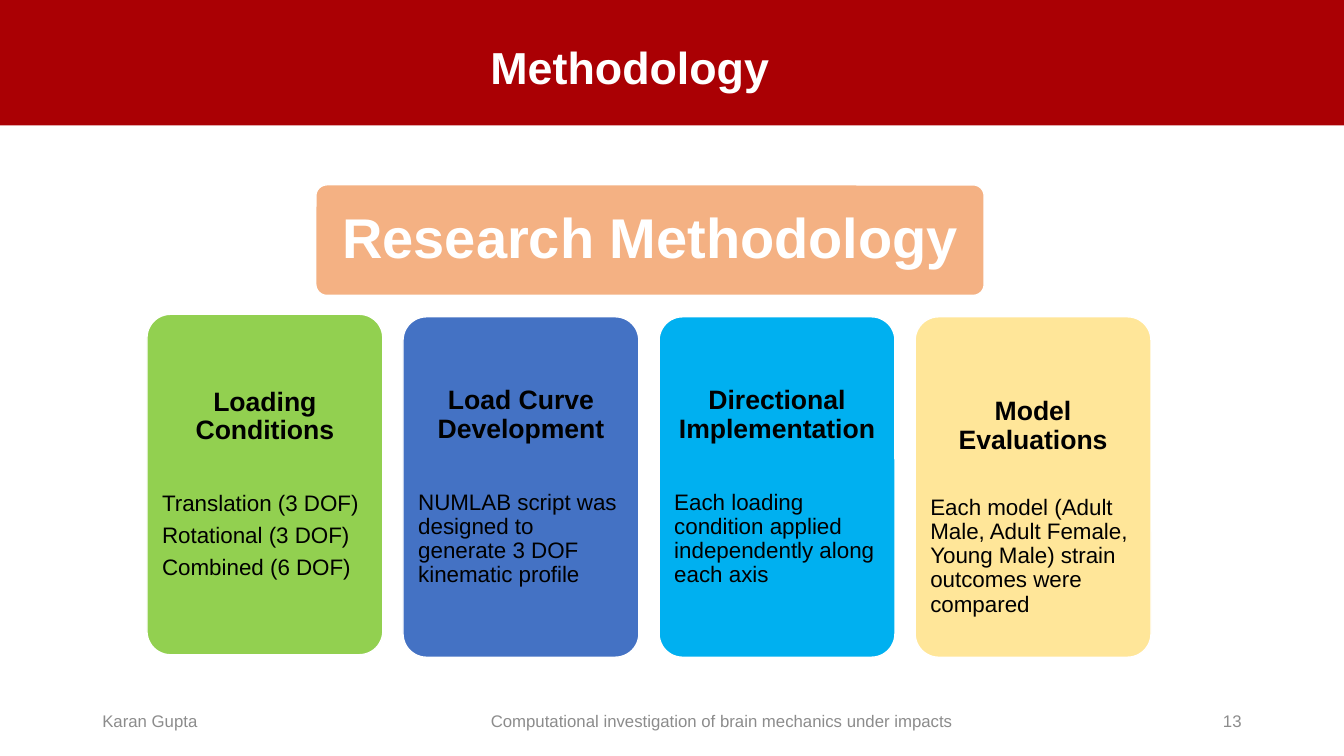
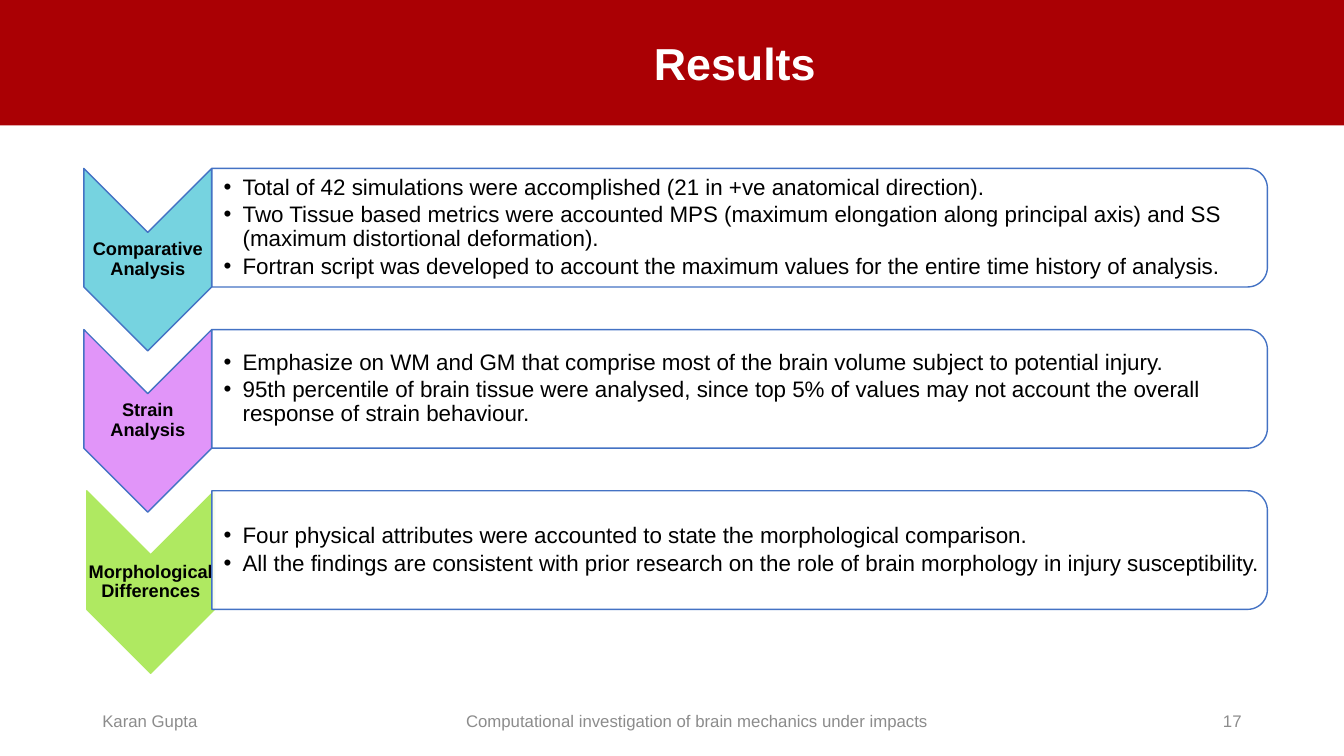
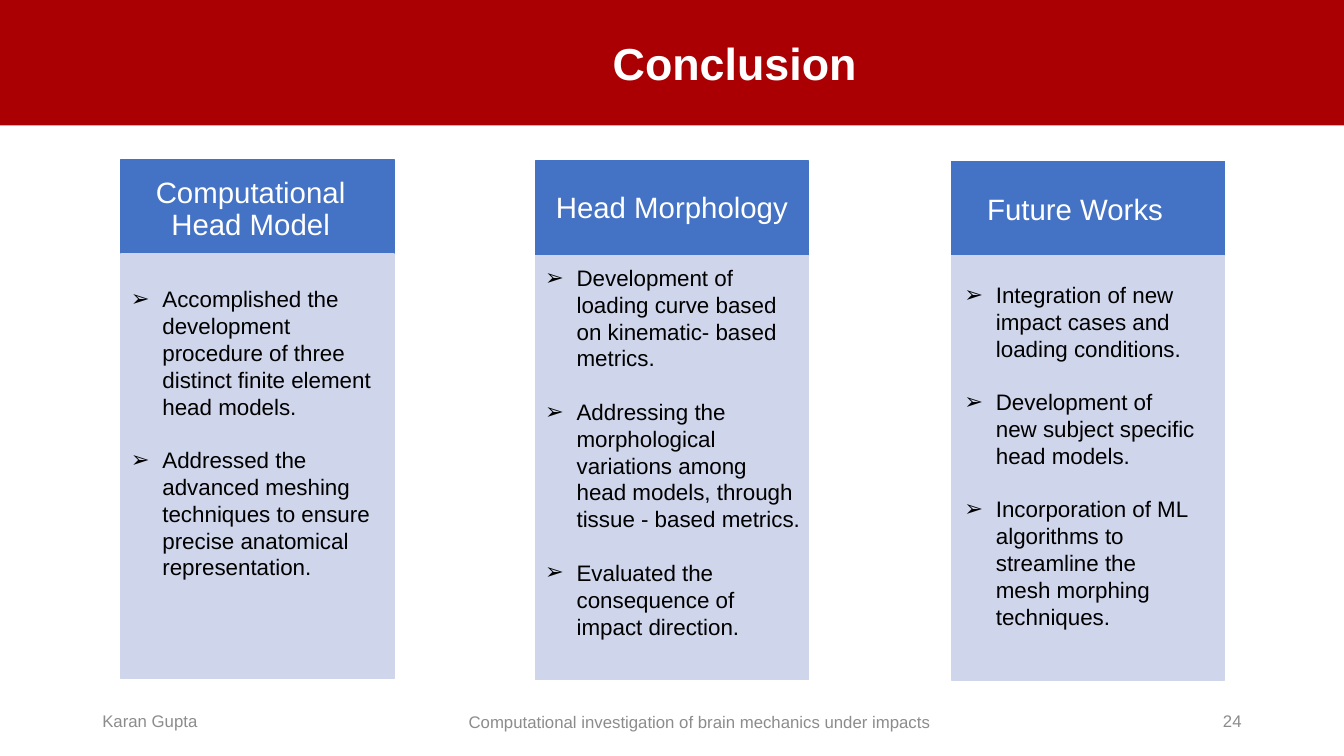
from math import cos, pi, sin

from lxml.etree import SubElement
from pptx import Presentation
from pptx.dml.color import RGBColor
from pptx.enum.shapes import MSO_SHAPE
from pptx.enum.text import MSO_ANCHOR, PP_ALIGN
from pptx.oxml.ns import qn
from pptx.util import Pt

COLORS = {
    "band": "AA0004", "white": "FFFFFF", "black": "000000", "gray": "8C8C8C",
    "peach": "F4B183", "green": "92D050", "blue": "4472C4", "sky": "00B0F0",
    "sand": "FFE699", "teal": "76D3E0", "violet": "E195F9", "lime": "AFE961",
    "pale": "CFD5EA",
}
CENTER = {"alignment": PP_ALIGN.CENTER}
TIGHT = {"line_spacing": 0.9}
STYLES = {
    "title": {"size": Pt(32), "bold": True, "color": "white", **CENTER, **TIGHT},
    "footer": {"size": Pt(12), "color": "gray"},
    "banner": {"size": Pt(40), "bold": True, "color": "white", **CENTER, **TIGHT, "space_after": Pt(14)},
    "heading": {"size": Pt(19), "bold": True, "color": "black", **CENTER, **TIGHT},
    "detail": {"size": Pt(16), "color": "black", **TIGHT, "space_after": Pt(5.6)},
    "step": {"size": Pt(13), "bold": True, "color": "black", **CENTER, **TIGHT, "space_after": Pt(4.5)},
    "finding": {"size": Pt(16), "color": "black", "bullet": ("•", 13.5), **TIGHT, "space_after": Pt(2.4)},
    "topic": {"size": Pt(21), "color": "white", **CENTER, **TIGHT, "space_after": Pt(7.4)},
    "point": {"size": Pt(16), "color": "black", "bullet": ("➢", 22.5), "space_after": Pt(19)},
}


def paint(sp, fill, line, alpha=None):
    sp.shadow.inherit = False
    sp.fill.solid()
    sp.fill.fore_color.rgb = RGBColor.from_string(COLORS[fill])
    sp.line.color.rgb = RGBColor.from_string(COLORS[line])
    sp.line.width = Pt(1)
    if alpha:
        for clr in sp.element.spPr.iter(qn("a:srgbClr")):
            if clr.get("val") == COLORS[fill]:
                SubElement(clr, qn("a:alpha"), val=str(alpha * 1000))


def write(sp, paras, inset=(7.2, 3.6, 7.2, 3.6), anchor=MSO_ANCHOR.MIDDLE):
    tf = sp.text_frame
    tf.word_wrap = True
    tf.vertical_anchor = anchor
    for side, gap in zip(("left", "top", "right", "bottom"), inset):
        setattr(tf, f"margin_{side}", Pt(gap))
    for i, (text, style) in enumerate(paras):
        p = tf.add_paragraph() if i else tf.paragraphs[0]
        p.alignment = PP_ALIGN.LEFT
        if "bullet" in style:
            char, indent = style["bullet"]
            pPr = p._p.get_or_add_pPr()
            pPr.set("marL", str(Pt(indent)))
            pPr.set("indent", str(-Pt(indent)))
            SubElement(pPr, qn("a:buFont"), typeface="Arial")
            SubElement(pPr, qn("a:buChar"), char=char)
        r = p.add_run()
        r.text = text
        r.font.name = "Arial"
        r.font.color.rgb = RGBColor.from_string(COLORS[style["color"]])
        for key, value in style.items():
            if key not in ("color", "bullet"):
                setattr(r.font if key in ("size", "bold") else p, key, value)


prs = Presentation()
prs.slide_width, prs.slide_height = Pt(960), Pt(540)

slides = []
for title, left, top, number, footer_width, footer_top in (
    ("Methodology", 136.8, 23.8, "13", 395.3, 500.4),
    ("Results", 211.7, 20.9, "17", 360, 500.4),
    ("Conclusion", 211.7, 20.9, "24", 363.6, 501.1),
):
    s = prs.slides.add_slide(prs.slide_layouts[6])
    slides.append(s)
    band = s.shapes.add_shape(MSO_SHAPE.RECTANGLE, 0, 0, prs.slide_width, Pt(89.6))
    paint(band, "band", "band")
    band.line.fill.background()
    tb = s.shapes.add_textbox(Pt(left), Pt(top), Pt(626.4), Pt(51.8))
    write(tb, [(title, STYLES["title"])])
    for text, x, y, w, align in (
        ("Karan Gupta", 66, 500.4, 216, PP_ALIGN.LEFT),
        ("Computational investigation of brain mechanics under impacts",
         318, footer_top, footer_width, PP_ALIGN.CENTER),
        (number, 678, 500.4, 216, PP_ALIGN.RIGHT),
    ):
        tb = s.shapes.add_textbox(Pt(x), Pt(y), Pt(w), Pt(28.8))
        write(tb, [(text, {**STYLES["footer"], "alignment": align})])

methodology, results, conclusion = slides

banner = methodology.shapes.add_shape(
    MSO_SHAPE.ROUNDED_RECTANGLE, Pt(225.6), Pt(132), Pt(477.4), Pt(79))
banner.adjustments[0] = 0.1
paint(banner, "peach", "white")
write(banner, [("Research Methodology", STYLES["banner"])], (12, 12, 12, 12))

cards = (
    ("green", 224.5, 5.9, 33.5, "Loading Conditions",
     ("Translation (3 DOF)", "Rotational (3 DOF)", "Combined (6 DOF)")),
    ("blue", 226.3, 5.9, 33.5, "Load Curve Development",
     ("NUMLAB script was designed to generate 3 DOF kinematic profile",)),
    ("sky", 226.3, 5.9, 33.5, "Directional Implementation",
     ("Each loading condition applied independently along each axis",)),
    ("sand", 226.3, 34.7, 29.4, "Model Evaluations",
     ("Each model (Adult Male, Adult Female, Young Male) strain outcomes were compared",)),
)
for i, (fill, top, inset_top, gap, heading, details) in enumerate(cards):
    card = methodology.shapes.add_shape(
        MSO_SHAPE.ROUNDED_RECTANGLE, Pt(105 + 182.9 * i), Pt(top), Pt(168.5), Pt(243.2))
    card.adjustments[0] = 0.1
    paint(card, fill, "white")
    paras = [(heading, {**STYLES["heading"], "space_after": Pt(gap)})]
    paras += [(text, STYLES["detail"]) for text in details]
    write(card, paras, (5.9, inset_top, 5.9, 5.9))

steps = (
    ("Comparative Analysis", "teal", "blue", 59.9,
     ("Total of 42 simulations were accomplished (21 in +ve anatomical direction).",
      "Two Tissue based metrics were accounted MPS (maximum elongation along principal axis) and SS (maximum distortional deformation).",
      "Fortran script was developed to account the maximum values for the entire time history of analysis.")),
    ("Strain Analysis", "violet", "blue", 59.9,
     ("Emphasize on WM and GM that comprise most of the brain volume subject to potential injury.",
      "95th percentile of brain tissue were analysed, since top 5% of values may not account the overall response of strain behaviour.")),
    ("Morphological Differences", "lime", "lime", 62,
     ("Four physical attributes were accounted to state the morphological comparison.",
      "All the findings are consistent with prior research on the role of brain morphology in injury susceptibility.")),
)
box_left, box_right, box_height, radius = 151.3, 905.3, 84.7, 14.1
step_width, notch = 91.3, 45.7
arc = [(radius * sin(k * pi / 24), radius * cos(k * pi / 24)) for k in range(13)]
for i, (label, fill, line, left, findings) in enumerate(steps):
    top = 120.3 + 115.15 * i
    bottom = top + box_height
    middle, right = left + step_width / 2, left + step_width
    chevron_points = [
        (left, top), (middle, top + notch), (right, top),
        (right, bottom), (middle, bottom + notch), (left, bottom),
    ]
    box_points = [(box_left, top)]
    box_points += [(box_right - radius + x, top + radius - y) for x, y in arc]
    box_points += [(box_right - radius + x, bottom - radius + y) for x, y in reversed(arc)]
    box_points += [(box_left, bottom)]
    outlines = []
    for points in (chevron_points, box_points):
        points = [(Pt(x), Pt(y)) for x, y in points]
        fb = results.shapes.build_freeform(*points[0])
        fb.add_line_segments(points[1:], close=True)
        outlines.append(fb.convert_to_shape())
    chevron, box = outlines
    paint(chevron, fill, line)
    write(chevron, [(label, STYLES["step"])], (0.7, 46, 0.7, 46))
    paint(box, "white", "blue", 90)
    write(box, [(text, STYLES["finding"]) for text in findings], (8.5, 5, 5, 5))

columns = (
    ("Computational Head Model", 86.4, 114, 81.4, 114, (86.4, 200.2, 195.1, 220.3),
     ("Accomplished the development procedure of three distinct finite element head models.",
      "Addressed the advanced meshing techniques to ensure precise anatomical representation.")),
    ("Head Morphology", 382.3, 115, 382.3, 113.3, (382.3, 185, 197.3, 298),
     ("Development of loading curve based on kinematic- based metrics.",
      "Addressing the morphological variations among head models, through tissue - based metrics.",
      "Evaluated the consequence of impact direction.")),
    ("Future Works", 679.7, 115.2, 670.3, 114.5, (681.8, 197.3, 180, 259.2),
     ("Integration of new impact cases and loading conditions.",
      "Development of new subject specific head models.",
      "Incorporation of ML algorithms to streamline the mesh morphing techniques.")),
)
for topic, left, top, topic_left, topic_top, area, points in columns:
    for y, h, fill in ((top, 67.4, "blue"), (top + 67.4, 303.1, "pale")):
        panel = conclusion.shapes.add_shape(
            MSO_SHAPE.RECTANGLE, Pt(left), Pt(y), Pt(195.1), Pt(h))
        paint(panel, fill, fill)
    tb = conclusion.shapes.add_textbox(Pt(topic_left), Pt(topic_top), Pt(195.1), Pt(72))
    write(tb, [(topic, STYLES["topic"])], (11.5, 6.5, 11.5, 6.5))
    tb = conclusion.shapes.add_textbox(*map(Pt, area))
    write(tb, [(text, STYLES["point"]) for text in points], anchor=MSO_ANCHOR.TOP)

prs.save("out.pptx")
